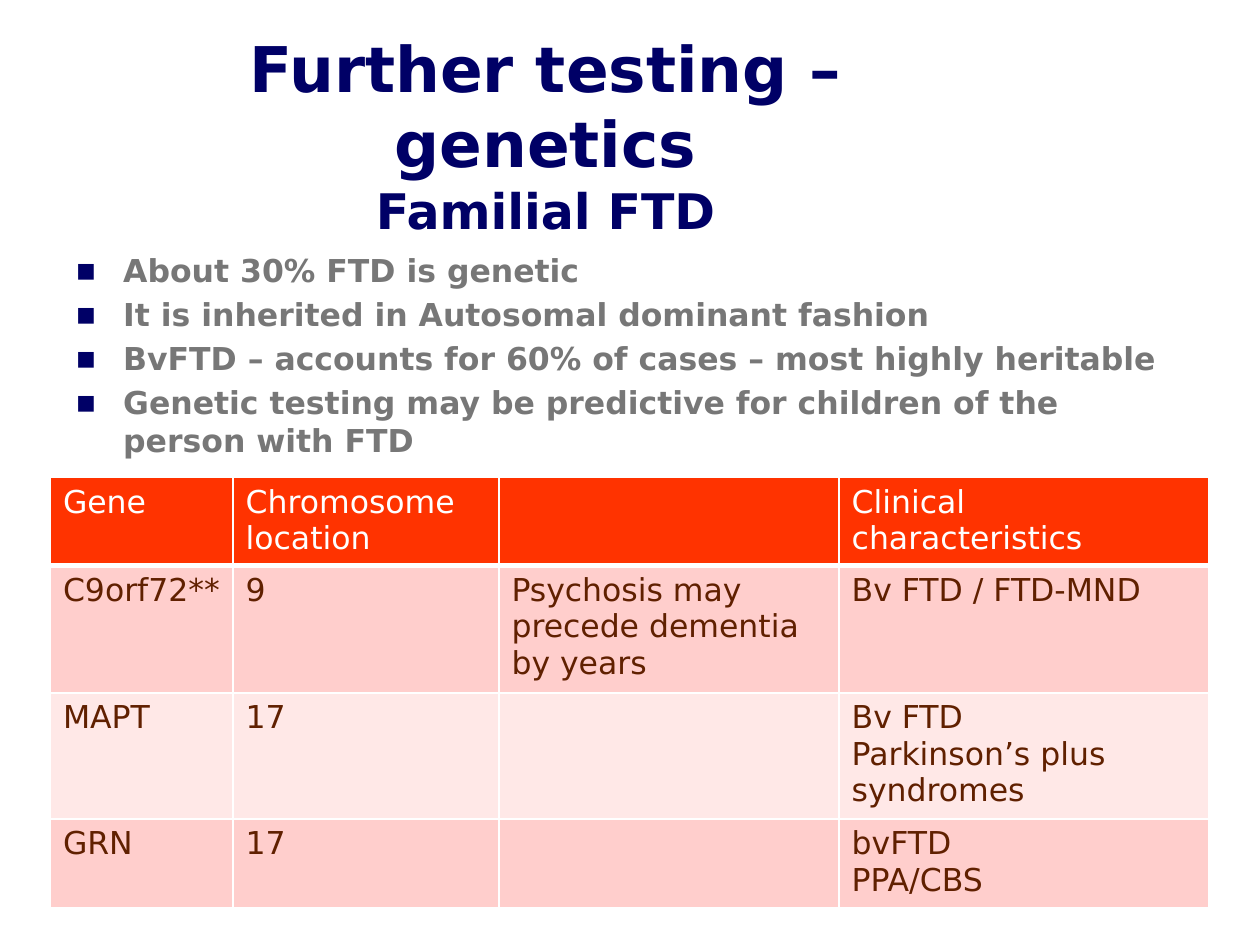
import lxml.etree
import pptx
import pptx.dml.color
import pptx.enum.text
import pptx.oxml.ns
import pptx.util

Inches, Pt = pptx.util.Inches, pptx.util.Pt
qn = pptx.oxml.ns.qn

# Content
TITLE, SUBTITLE = "Further testing – genetics", "Familial FTD"
POINTS = [
    "About 30% FTD is genetic",
    "It is inherited in Autosomal dominant fashion",
    "BvFTD – accounts for 60% of cases – most highly heritable",
    "Genetic testing may be predictive for children of the person with FTD",
]
GENES = [
    ["Gene", "Chromosome location", "", "Clinical characteristics"],
    ["C9orf72**", "9", "Psychosis may precede dementia by years", "Bv FTD / FTD-MND"],
    ["MAPT", "17", "", "Bv FTD\nParkinson’s plus syndromes"],
    ["GRN", "17", "", "bvFTD\nPPA/CBS"],
]
COLUMN_WIDTHS = [1.45, 2.11, 2.7, 2.93]
ROW_HEIGHTS = [0.61, 1.01, 0.61, 0.61]

THEME = {
    "font": "DejaVu Sans",
    "navy": "000066",
    "header": "FF3300",
    "bands": ["FFCECC", "FFE8E7"],
    "border": "FFFFFF",
    "title": {"size": 36, "color": "000066", "bold": True},
    "subtitle": {"size": 28, "color": "000066", "bold": True},
    "point": {"size": 18, "color": "777777", "bold": True},
    "head_cell": {"size": 18, "color": "FFFFFF", "bold": False},
    "body_cell": {"size": 18, "color": "602000", "bold": False},
}


def add_span(para, text, style):
    span = para.add_run()
    span.text = text
    span.font.color.rgb = pptx.dml.color.RGBColor.from_string(style["color"])
    values = {"name": THEME["font"], "size": Pt(style["size"]), "bold": style["bold"]}
    for name, value in values.items():
        setattr(span.font, name, value)


def add_box(page, left, top, width, height, anchor):
    box = page.shapes.add_textbox(*map(Inches, (left, top, width, height)))
    box.text_frame.word_wrap = True
    box.text_frame.vertical_anchor = anchor
    return box.text_frame


def paragraphs(frame, lines):
    for index, line in enumerate(lines):
        yield index, frame.add_paragraph() if index else frame.paragraphs[0], line


def add_bullet(para):
    properties = para._p.get_or_add_pPr()
    properties.set("marL", str(Inches(0.38)))
    properties.set("indent", str(-Inches(0.38)))
    color = lxml.etree.SubElement(properties, qn("a:buClr"))
    lxml.etree.SubElement(color, qn("a:srgbClr"), val=THEME["navy"])
    lxml.etree.SubElement(properties, qn("a:buFont"), typeface=THEME["font"])
    lxml.etree.SubElement(properties, qn("a:buChar"), char="▪")


def set_borders(cell, bottom_width, top_width):
    properties = cell._tc.get_or_add_tcPr()
    widths = {"lnL": 1, "lnR": 1, "lnT": top_width, "lnB": bottom_width}
    for index, (side, width) in enumerate(widths.items()):
        line = lxml.etree.Element(qn("a:" + side), w=str(Pt(width)))
        fill = lxml.etree.SubElement(line, qn("a:solidFill"))
        lxml.etree.SubElement(fill, qn("a:srgbClr"), val=THEME["border"])
        properties.insert(index, line)


deck = pptx.Presentation()
deck.slide_width, deck.slide_height = Inches(10), Inches(7.5)
page = deck.slides.add_slide(deck.slide_layouts[6])
anchors = pptx.enum.text.MSO_ANCHOR

# Title with subtitle on its own line
para = add_box(page, 0.66, 0.44, 7.34, 1.25, anchors.MIDDLE).paragraphs[0]
para.alignment = pptx.enum.text.PP_ALIGN.CENTER
add_span(para, TITLE, THEME["title"])
para.add_line_break()
add_span(para, SUBTITLE, THEME["subtitle"])

# Bullet points
frame = add_box(page, 0.5, 1.94, 9, 1.81, anchors.TOP)
for index, para, point in paragraphs(frame, POINTS):
    add_bullet(para)
    if index:
        para.space_before = Pt(3.6)
    add_span(para, point, THEME["point"])

# Gene table
table = page.shapes.add_table(
    len(GENES), len(COLUMN_WIDTHS), Inches(0.4), Inches(3.79),
    Inches(sum(COLUMN_WIDTHS)), Inches(sum(ROW_HEIGHTS)),
).table
for column, width in zip(table.columns, COLUMN_WIDTHS):
    column.width = Inches(width)
for number, (row, height, texts) in enumerate(zip(table.rows, ROW_HEIGHTS, GENES)):
    row.height = Inches(height)
    fill = THEME["bands"][(number - 1) % 2] if number else THEME["header"]
    style = THEME["body_cell" if number else "head_cell"]
    for cell, text in zip(row.cells, texts):
        cell.fill.solid()
        cell.fill.fore_color.rgb = pptx.dml.color.RGBColor.from_string(fill)
        set_borders(cell, 1 if number else 3, 3 if number == 1 else 1)
        if text:
            for _, para, line in paragraphs(cell.text_frame, text.split("\n")):
                add_span(para, line, style)

deck.save("out.pptx")
